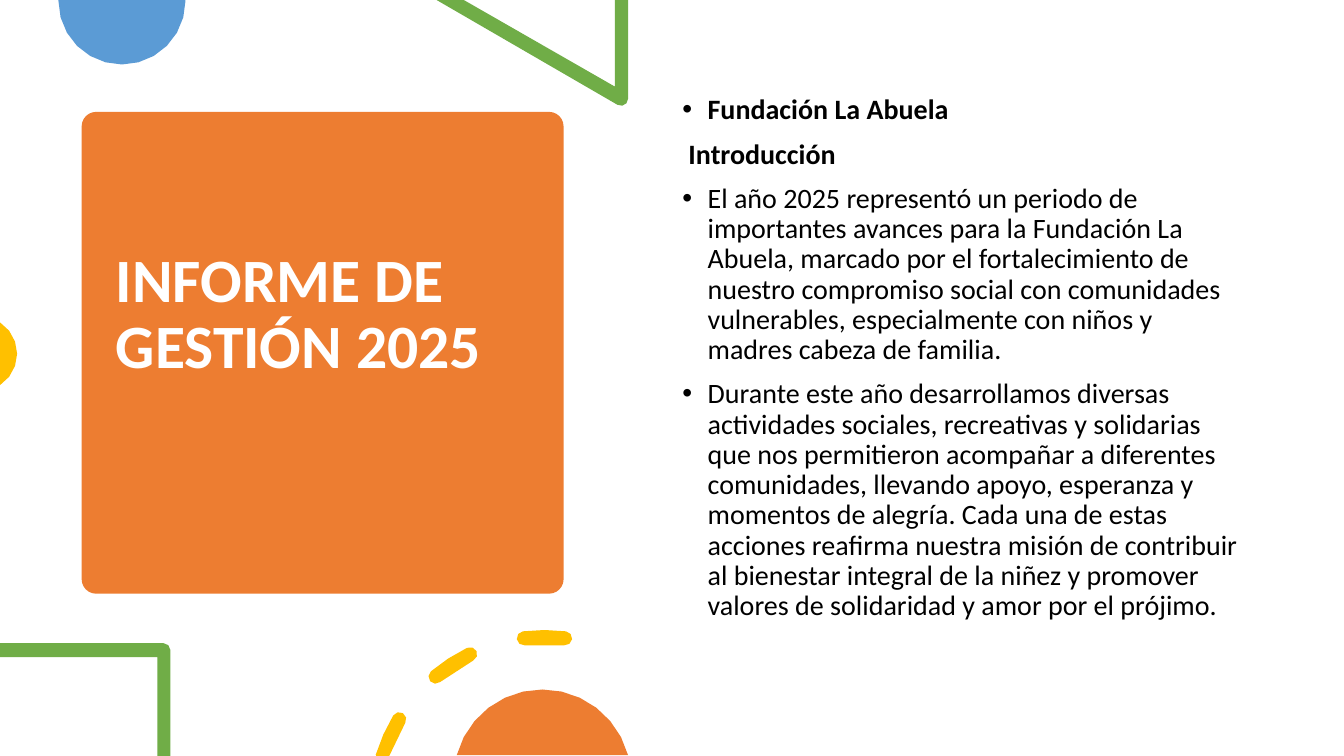
from math import cos, radians, sin

from lxml import etree
from pptx import Presentation
from pptx.dml.color import RGBColor
from pptx.enum.shapes import MSO_SHAPE
from pptx.enum.text import MSO_ANCHOR
from pptx.oxml.ns import qn
from pptx.util import Pt

PX = 9144  # 100 px to the inch
ROUND = MSO_SHAPE.ROUNDED_RECTANGLE
MIDDLE, TOP = MSO_ANCHOR.MIDDLE, MSO_ANCHOR.TOP

ORANGE = RGBColor(0xED, 0x7D, 0x31)
BLUE = RGBColor(0x5B, 0x9B, 0xD5)
GREEN = RGBColor(0x70, 0xAD, 0x47)
GOLD = RGBColor(0xFF, 0xC0, 0x00)
WHITE = RGBColor(0xFF, 0xFF, 0xFF)
BLACK = RGBColor(0x00, 0x00, 0x00)

TITLE = "INFORME DE GESTIÓN 2025"
# Text, bold, bullet
BODY = [
    ("Fundación La Abuela", True, True),
    ("Introducción", True, False),
    ("El año 2025 representó un periodo de importantes avances para la "
     "Fundación La Abuela, marcado por el fortalecimiento de nuestro "
     "compromiso social con comunidades vulnerables, especialmente con "
     "niños y madres cabeza de familia.", False, True),
    ("Durante este año desarrollamos diversas actividades sociales, "
     "recreativas y solidarias que nos permitieron acompañar a diferentes "
     "comunidades, llevando apoyo, esperanza y momentos de alegría. Cada una "
     "de estas acciones reafirma nuestra misión de contribuir al bienestar "
     "integral de la niñez y promover valores de solidaridad y amor por el "
     "prójimo.", False, True),
]


def emu(*vals):
    return [round(v * PX) for v in vals]


def assign(obj, vals):
    for name, val in vals.items():
        setattr(obj, name, val)


def paint(shape, color):
    shape.shadow.inherit = False
    shape.fill.solid()
    shape.fill.fore_color.rgb = color
    shape.line.fill.background()


def arc(x, y, r, start, end, steps):
    """Points on an arc; angles in degrees, counter-clockwise from the right."""
    turns = [radians(start + (end - start) * i / steps) for i in range(steps + 1)]
    return [(x + r * cos(t), y - r * sin(t)) for t in turns]


def blob(slide, box, color, *rings):
    """One filled freeform from closed rings of points inside the box."""
    left, top, _, high = box
    build = None
    for ring in rings:
        pts = [emu(left + x, top + min(y, high)) for x, y in ring]
        if build is None:
            build = slide.shapes.build_freeform(*pts[0], scale=1)
        else:
            build.move_to(*pts[0])
        build.add_line_segments(pts[1:], close=True)
    paint(build.convert_to_shape(), color)


def text_box(slide, box, anchor, low=5):
    frame = slide.shapes.add_textbox(*emu(*box)).text_frame
    edge, side, base = emu(5, 10, low)
    assign(frame, dict(word_wrap=True, vertical_anchor=anchor, margin_top=edge,
                       margin_bottom=base, margin_left=side, margin_right=side))
    return frame


def write(para, text, size, color, bold):
    run = para.add_run()
    run.text = text
    para.line_spacing = 0.9
    assign(run.font, dict(name="Calibri", size=Pt(size), bold=bold))
    run.font.color.rgb = color


def indent(para, left, hang, mark):
    props = para._p.get_or_add_pPr()
    props.set("marL", str(left * PX))
    props.set("indent", str(-hang * PX))
    if mark:
        font = etree.SubElement(props, qn("a:buFont"))
        font.set("typeface", "Arial")
        etree.SubElement(props, qn("a:buChar")).set("char", mark)
    else:
        etree.SubElement(props, qn("a:buNone"))


# Orange title card
def card(slide, box):
    left, top, wide, high = box
    panel = slide.shapes.add_shape(ROUND, *emu(*box))
    panel.adjustments[0] = 0.03
    paint(panel, ORANGE)
    # The deep lower margin lifts the title above the middle
    frame = text_box(slide, (left + 24, top + 11, wide - 47, high - 22), MIDDLE, 79)
    write(frame.paragraphs[0], TITLE, 44, WHITE, True)


# Half disc and triangle corner on the top edge
def crown(slide, box):
    blob(slide, box, BLUE, arc(63, 1, 63, 180, 360, 12) + [(126, 0), (0, 0)])
    tip = arc(558, 98, 7, -120, 0, 3)
    blob(slide, box, GREEN,
         [(375, 0)] + tip + [(565, 0), (552, 0), (552, 86), (402, 0)])


# Disc cut by the left edge
def bead(slide, box):
    blob(slide, box, GOLD, arc(-20, 30, 37, -57, 57, 6))


# Frame corner, dashed ring and disc on the bottom edge
def foot(slide, box):
    high = box[3]
    bend = arc(162, 20, 7, 90, 0, 2)
    blob(slide, box, GREEN,
         [(0, 13)] + bend + [(169, high), (156, high), (156, 27), (0, 27)])
    mid, deep, mean, half = 540, 175, 168, 7
    dashes = []
    for start, end in ((163, 149), (130, 116), (97, 83)):
        (x0, y0), (x1, y1) = arc(mid, deep, mean, start, end, 1)
        # Each round cap begins and ends on a side of the dash
        dashes.append(arc(x1, y1, half, end, end - 180, 4)
                      + arc(x0, y0, half, start + 180, start, 4)
                      + arc(mid, deep, mean + half, start, end, 2)[1:2])
    blob(slide, box, GOLD, *dashes)
    blob(slide, box, ORANGE, arc(538, 147, 88, 15, 165, 12))


# Introduction text
def intro(slide, box):
    frame = text_box(slide, box, TOP)
    for i, (text, bold, mark) in enumerate(BODY):
        para = frame.add_paragraph() if i else frame.paragraphs[0]
        if mark:
            indent(para, 25, 25, "•")
        else:
            indent(para, 6, 0, None)
        if i:
            para.space_before = Pt(10)
        write(para, text, 20, BLACK, bold)


def main():
    deck = Presentation()
    deck.slide_width, deck.slide_height = emu(1333, 750)
    slide = deck.slides.add_slide(deck.slide_layouts[6])
    card(slide, (81, 111, 478, 478))
    crown(slide, (58, 0, 565, 105))
    bead(slide, (0, 321, 17, 61))
    intro(slide, (667, 90, 575, 535))
    foot(slide, (0, 625, 623, 125))
    deck.save("out.pptx")


if __name__ == "__main__":
    main()
